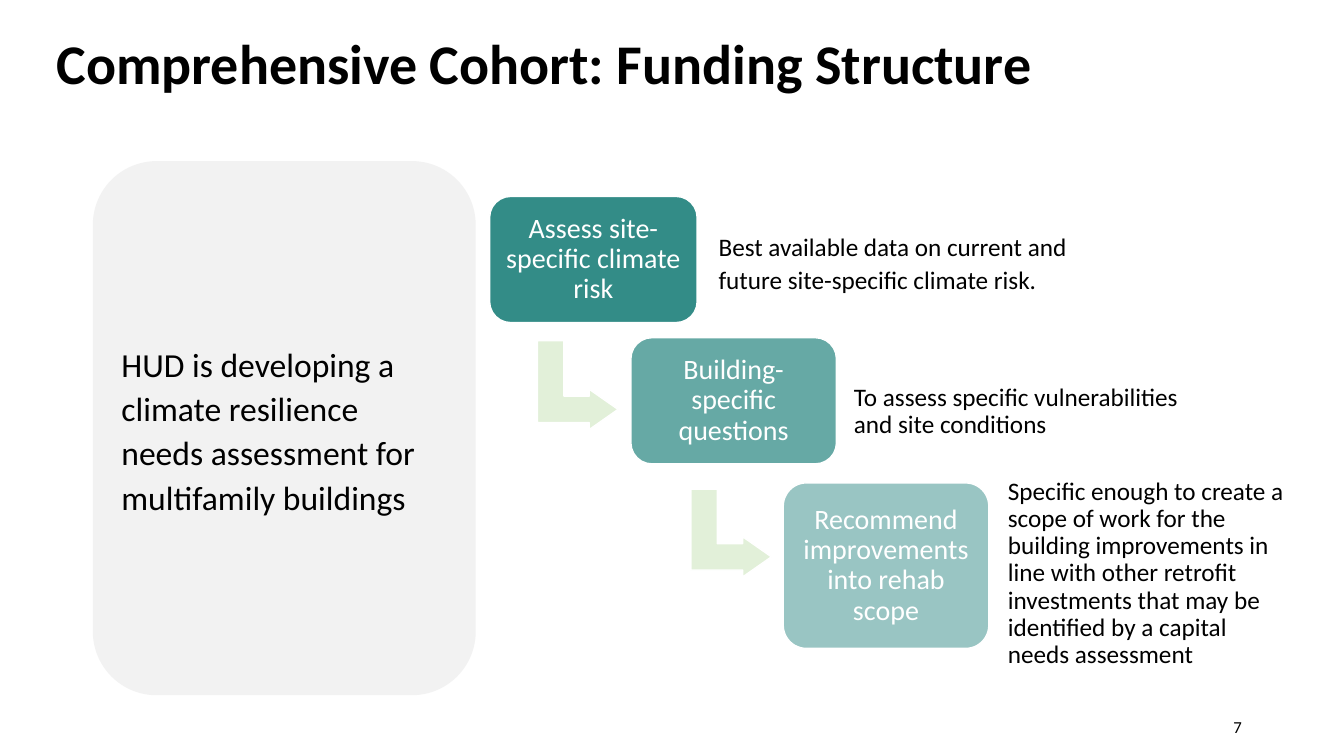
from lxml import etree
from pptx import Presentation
from pptx.dml.color import RGBColor
from pptx.enum import shapes, text
from pptx.oxml.ns import qn
from pptx.util import Cm, Pt

TITLE = "Comprehensive Cohort: Funding Structure"
SUMMARY = "HUD is developing a climate resilience needs assessment for multifamily buildings"
PAGE = "7"

# Boxes are left, top, width, height in cm; opacity is in percent.
STEPS = [
    {"label": "Assess site-specific climate risk", "box": (12.34, 4.95, 5.23, 3.18),
     "opacity": 80, "corner": 0.167,
     "detail": "Best available data on current and future site-specific climate risk.",
     "detail_box": (17.96, 4.85, 9.9, 3.48), "detail_inset": 0.15, "detail_spacing": 1.1},
    {"label": "Building-specific questions", "box": (15.9, 8.51, 5.18, 3.18),
     "opacity": 60, "corner": 0.167,
     "detail": "To assess specific vulnerabilities and site conditions",
     "detail_box": (21.39, 9.32, 9.07, 2.11), "detail_inset": 0.13, "detail_spacing": 0.9},
    {"label": "Recommend improvements into rehab scope", "box": (19.74, 12.17, 5.18, 4.17),
     "opacity": 40, "corner": 0.14,
     "detail": "Specific enough to create a scope of work for the building improvements "
               "in line with other retrofit investments that may be identified by a "
               "capital needs assessment",
     "detail_box": (25.27, 12.17, 7.29, 4.57), "detail_inset": 0.13, "detail_spacing": 0.9},
]
ARROWS = [(13.44, 8.69, 2.24, 2.03), (17.32, 12.42, 2.21, 2.03)]

COLORS = {"ink": "000000", "white": "FFFFFF", "teal": "017069",
          "arrow": "E2F0D9", "panel": "F2F2F2"}
FONT = "Calibri"
LEFT, CENTER, RIGHT = text.PP_ALIGN.LEFT, text.PP_ALIGN.CENTER, text.PP_ALIGN.RIGHT
SHAPE = shapes.MSO_SHAPE


def color(name):
    return RGBColor.from_string(COLORS[name])


def write(shape, words, size, ink="ink", align=LEFT, spacing=1.0, inset=None, bold=False):
    frame = shape.text_frame
    frame.word_wrap = True
    frame.auto_size = text.MSO_AUTO_SIZE.NONE
    frame.vertical_anchor = text.MSO_ANCHOR.MIDDLE
    if inset is not None:
        frame.margin_left = frame.margin_right = Cm(inset)
        frame.margin_top = frame.margin_bottom = Cm(inset)
    frame.text = words
    paragraph = frame.paragraphs[0]
    paragraph.alignment = align
    paragraph.line_spacing = spacing
    paragraph.font.name = FONT
    paragraph.font.size = Pt(size)
    paragraph.font.bold = bold
    paragraph.font.color.rgb = color(ink)


def add_filled(slide, kind, box, fill, outlined=True, opacity=100):
    shape = slide.shapes.add_shape(kind, *map(Cm, box))
    shape.shadow.inherit = False
    shape.fill.solid()
    shape.fill.fore_color.rgb = color(fill)
    if opacity < 100:
        tint = shape.fill._xPr.find(qn("a:solidFill"))[0]
        etree.SubElement(tint, qn("a:alpha"), val=str(opacity * 1000))
    if outlined:
        shape.line.color.rgb = color("white")
        shape.line.width = Pt(1)
    else:
        shape.line.fill.background()
    return shape


def add_text(slide, box, words, size, **style):
    write(slide.shapes.add_textbox(*map(Cm, box)), words, size, **style)


def main():
    deck = Presentation()
    deck.slide_width, deck.slide_height = Cm(33.87), Cm(19.05)
    slide = deck.slides.add_slide(deck.slide_layouts[5])

    title = slide.shapes.title
    title.left, title.top, title.width, title.height = map(Cm, (1.17, 0.79, 29.21, 1.75))
    write(title, TITLE, 40, spacing=0.9, bold=True)

    summary = add_filled(slide, SHAPE.ROUNDED_RECTANGLE, (2.34, 4.06, 9.65, 13.46),
                         "panel", outlined=False)
    write(summary, SUMMARY, 24, spacing=1.1)

    for box in ARROWS:
        arrow = add_filled(slide, SHAPE.BENT_UP_ARROW, box, "arrow")
        arrow.rotation = 90
        for index, value in enumerate((0.328, 0.25, 0.358)):
            arrow.adjustments[index] = value

    for step in STEPS:
        card = add_filled(slide, SHAPE.ROUNDED_RECTANGLE, step["box"], "teal",
                          opacity=step["opacity"])
        card.adjustments[0] = step["corner"]
        write(card, step["label"], 20, ink="white", align=CENTER, spacing=0.9, inset=0.17)
        add_text(slide, step["detail_box"], step["detail"], 18,
                 spacing=step["detail_spacing"], inset=step["detail_inset"])

    add_text(slide, (23.93, 17.98, 7.62, 0.69), PAGE, 12, align=RIGHT)
    deck.save("out.pptx")


if __name__ == "__main__":
    main()
